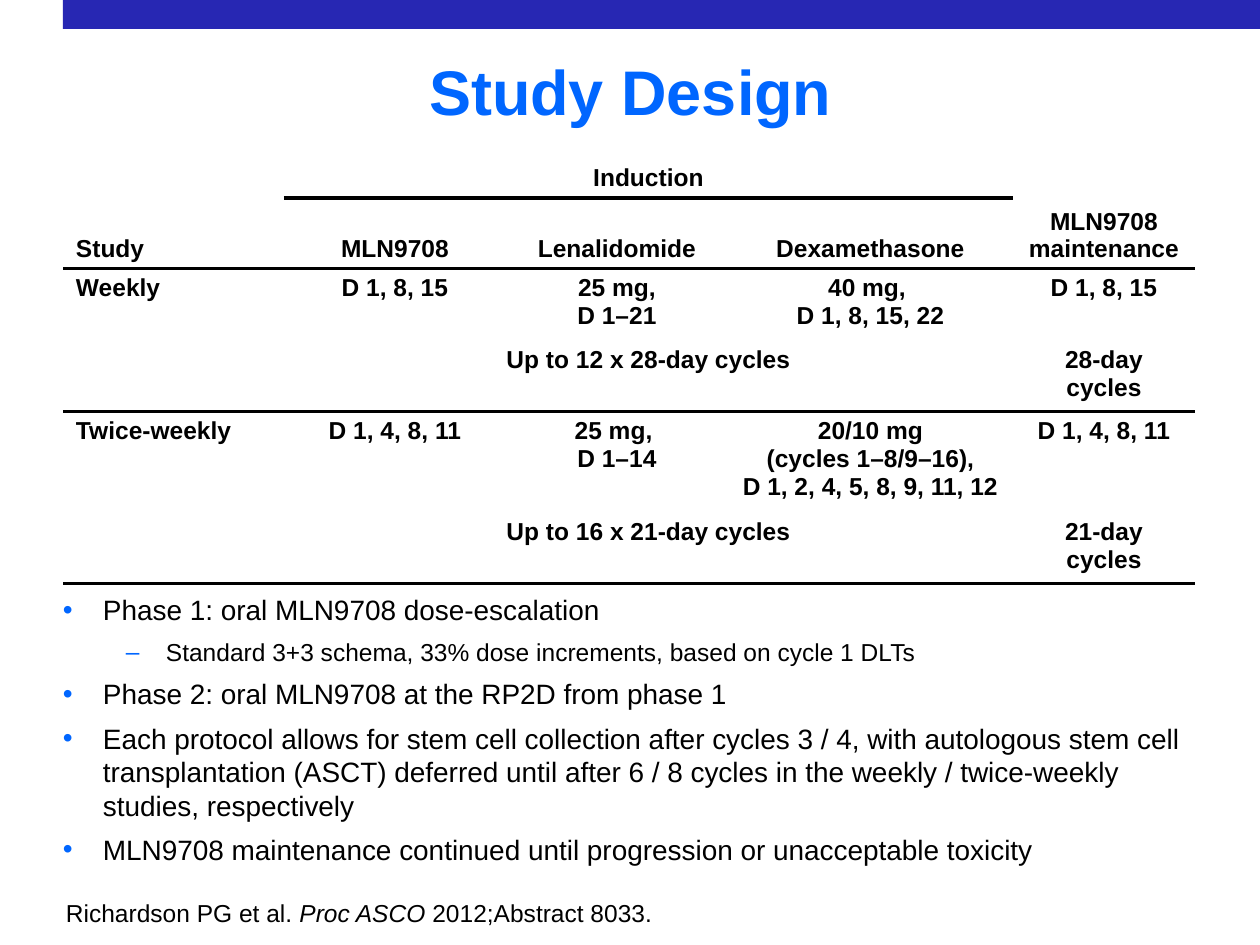
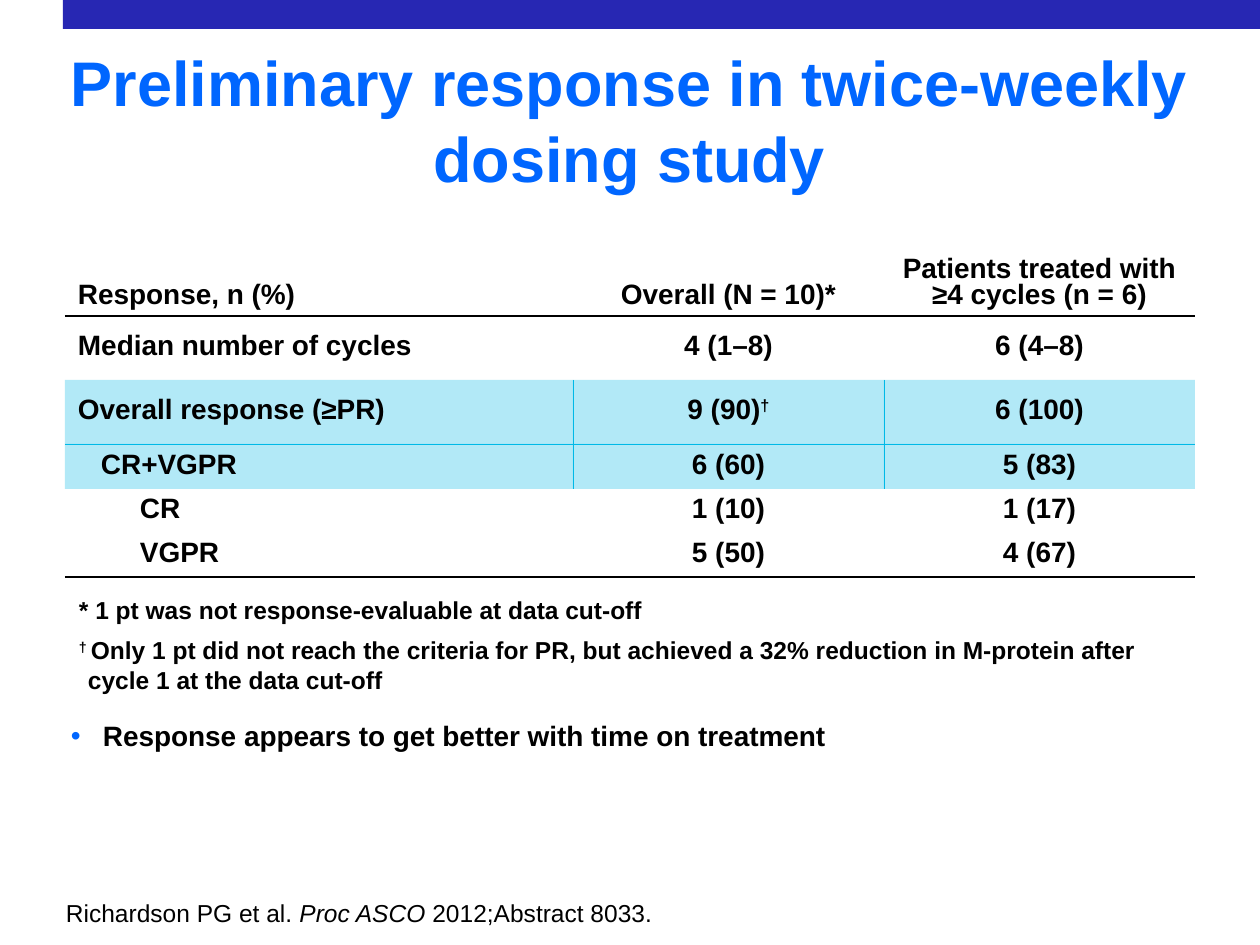
from dataclasses import dataclass

import pptx
import pptx.dml.color
import pptx.enum.shapes
import pptx.enum.text
import pptx.oxml.ns
import pptx.util
from lxml import etree

PX = 914400 / 126
FONT = "Arial"
BLACK, BLUE, NAVY, CYAN = "000000", "0066FF", "2727B3", "00B9E7"
LEFT, CENTER = pptx.enum.text.PP_ALIGN.LEFT, pptx.enum.text.PP_ALIGN.CENTER
TOP, MIDDLE, BOTTOM = (pptx.enum.text.MSO_ANCHOR.TOP, pptx.enum.text.MSO_ANCHOR.MIDDLE,
                       pptx.enum.text.MSO_ANCHOR.BOTTOM)
WIDE_INSETS, SLIM_INSETS, BULLET_INSETS = (13, 6, 13, 6), (5, 5, 5, 5), (0, 5, 5, 5)
NO_GRID_STYLE = "{2D5ABB26-0587-4C30-8999-92F81FD0307C}"


def px(length):
    return pptx.util.Emu(round(length * PX))


def rgb(color):
    return pptx.dml.color.RGBColor.from_string(color)


def add_xml(parent, tag, **attributes):
    return etree.SubElement(parent, pptx.oxml.ns.qn(tag), attributes)


@dataclass
class Text:
    """One paragraph; content is a string or a list of (text, "italic" | "super" | "")."""
    content: object
    size: int = 14
    bold: bool = False
    color: str = BLACK
    align: object = LEFT
    bullet: str = ""
    level: int = 0
    indent: int = 0
    hanging: int = 0
    before: int = 0
    after: int = 0
    spacing: float = 1.0


class Deck:
    def __init__(self):
        self.presentation = pptx.Presentation()
        self.presentation.slide_width = px(1260)
        self.presentation.slide_height = px(945)
        self.slide = None

    def add_slide(self):
        self.slide = self.presentation.slides.add_slide(self.presentation.slide_layouts[6])
        self.band(63, 0, 1197, 29)
        self.text_box(53, 892, 703, 43, [Text([
            ("Richardson PG et al. ", ""), ("Proc ASCO ", "italic"), ("2012;Abstract 8033.", "")])])

    def band(self, left, top, width, height):
        shape = self.slide.shapes.add_shape(
            pptx.enum.shapes.MSO_SHAPE.RECTANGLE, px(left), px(top), px(width), px(height))
        shape.shadow.inherit = False
        shape.fill.solid()
        shape.fill.fore_color.rgb = rgb(NAVY)
        shape.line.fill.background()

    def title(self, left, top, width, height, content, anchor=TOP, insets=WIDE_INSETS, spacing=1.0):
        self.text_box(left, top, width, height,
                      [Text(content, 36, True, BLUE, CENTER, spacing=spacing)], anchor, insets)

    def text_box(self, left, top, width, height, texts, anchor=TOP, insets=WIDE_INSETS):
        frame = self.slide.shapes.add_textbox(px(left), px(top), px(width), px(height)).text_frame
        frame.word_wrap = True
        frame.vertical_anchor = anchor
        (frame.margin_left, frame.margin_top,
         frame.margin_right, frame.margin_bottom) = map(px, insets)
        for index, text in enumerate(texts):
            self.set_paragraph(frame.add_paragraph() if index else frame.paragraphs[0], text)

    def set_paragraph(self, paragraph, text):
        if isinstance(text.content, str):
            paragraph.text = text.content
        else:
            for words, effect in text.content:
                run = paragraph.add_run()
                run.text = words
                if effect == "italic":
                    run.font.italic = True
                elif effect == "super":
                    run._r.get_or_add_rPr().set("baseline", "30000")
        paragraph.alignment = text.align
        paragraph.level = text.level
        paragraph.line_spacing = text.spacing
        paragraph.space_before = pptx.util.Pt(text.before)
        paragraph.space_after = pptx.util.Pt(text.after)
        properties = paragraph._p.get_or_add_pPr()
        properties.set("marL", str(px(text.indent)))
        properties.set("indent", str(px(-text.hanging)))
        if text.bullet:
            add_xml(add_xml(properties, "a:buClr"), "a:srgbClr", val=BLUE)
            add_xml(properties, "a:buFont", typeface=FONT)
            add_xml(properties, "a:buChar", char=text.bullet)
        font = paragraph.font
        font.name = FONT
        font.size = pptx.util.Pt(text.size)
        font.bold = text.bold
        font.color.rgb = rgb(text.color)

    def table(self, left, top, widths, heights):
        frame = self.slide.shapes.add_table(
            len(heights), len(widths), px(left), px(top), px(sum(widths)), px(sum(heights)))
        table = frame.table
        table.first_row = table.horz_banding = False
        table._tbl.tblPr.find(pptx.oxml.ns.qn("a:tableStyleId")).text = NO_GRID_STYLE
        for column, width in zip(table.columns, widths):
            column.width = px(width)
        for row, height in zip(table.rows, heights):
            row.height = px(height)
        return table

    def cell(self, cell, text, anchor, borders, tint=None):
        """Fill one cell; borders maps R or B to (color, points), tint is laid on at 30%."""
        if text.content:
            self.set_paragraph(cell.text_frame.paragraphs[0], text)
        cell.vertical_anchor = anchor
        (cell.margin_left, cell.margin_top,
         cell.margin_right, cell.margin_bottom) = map(px, WIDE_INSETS)
        properties = cell._tc.get_or_add_tcPr()
        for side in "RB":
            if side in borders:
                color, points = borders[side]
                line = add_xml(properties, f"a:ln{side}", w=str(pptx.util.Pt(points)))
                add_xml(add_xml(line, "a:solidFill"), "a:srgbClr", val=color)
        if tint:
            cell.fill.solid()
            cell.fill.fore_color.rgb = rgb(tint)
            fill_color = properties[-1][0]
            add_xml(fill_color, "a:alpha", val="30000")
        else:
            cell.fill.background()


def study_design(deck):
    deck.add_slide()
    deck.title(95, 55, 1071, 78, "Study Design", spacing=0.9)
    rows = [
        ["Study", "Induction", "", "", "MLN9708 maintenance"],
        ["", "MLN9708", "Lenalidomide", "Dexamethasone", ""],
        ["Weekly", "D 1, 8, 15", "25 mg,\vD 1–21", "40 mg, \vD 1, 8, 15, 22", "D 1, 8, 15"],
        ["", "Up to 12 x 28-day cycles", "", "", "28-day cycles"],
        ["Twice-weekly", "D 1, 4, 8, 11", "25 mg, \vD 1–14",
         "20/10 mg\v(cycles 1–8/9–16),\vD 1, 2, 4, 5, 8, 9, 11, 12", "D 1, 4, 8, 11"],
        ["", "Up to 16 x 21-day cycles", "", "", "21-day cycles"],
    ]
    table = deck.table(63, 147, [221, 222, 222, 285, 182], [51, 67, 72, 71, 101, 71])
    for column in (0, 4):
        table.cell(0, column).merge(table.cell(1, column))
    for row in (0, 3, 5):
        table.cell(row, 1).merge(table.cell(row, 3))
    for r, row in enumerate(rows):
        borders = {"B": (BLACK, 2.25)} if r in (0, 1, 3, 5) else {}
        for c, content in enumerate(row):
            deck.cell(table.cell(r, c), Text(content, bold=True, align=CENTER if c else LEFT),
                      BOTTOM if r < 2 else TOP, borders)

    def point(content):
        return Text(content, 16, bullet="•", indent=40, hanging=40, after=6)

    deck.text_box(63, 588, 1133, 305, [
        point("Phase 1: oral MLN9708 dose-escalation"),
        Text("Standard 3+3 schema, 33% dose increments, based on cycle 1 DLTs",
             bullet="–", level=1, indent=103, hanging=40, after=6),
        point("Phase 2: oral MLN9708 at the RP2D from phase 1"),
        point("Each protocol allows for stem cell collection after cycles 3 / 4, with autologous "
              "stem cell transplantation (ASCT) deferred until after 6 / 8 cycles in the weekly / "
              "twice-weekly studies, respectively"),
        point("MLN9708 maintenance continued until progression or unacceptable toxicity"),
    ], insets=BULLET_INSETS)


def preliminary_response(deck):
    deck.add_slide()
    deck.title(63, 59, 1133, 141, "Preliminary response in twice-weekly dosing study",
               BOTTOM, SLIM_INSETS)
    rows = [
        ["Response, n (%)", "Overall (N = 10)*", "Patients treated with ≥4 cycles (n = 6)"],
        ["Median number of cycles", "4 (1–8)", "6 (4–8)"],
        ["Overall response (≥PR)", [("9 (90)", ""), ("†", "super")], "6 (100)"],
        ["CR+VGPR", "6 (60)", "5 (83)"],
        ["CR", "1 (10)", "1 (17)"],
        ["VGPR", "5 (50)", "4 (67)"],
    ]
    label_indents = [0, 0, 0, 23, 62, 62]
    rules = {0: (BLACK, 1.5), 2: (CYAN, 0.25), 5: (BLACK, 1)}
    table = deck.table(65, 246, [508, 311, 311], [70, 64, 64, 45, 44, 44])
    for r, row in enumerate(rows):
        highlighted = r in (2, 3)
        for c, content in enumerate(row):
            borders = {"B": rules[r]} if r in rules else {}
            if highlighted and c < 2:
                borders["R"] = (CYAN, 0.25)
            text = Text(content, 16, True, align=CENTER if c else LEFT,
                        indent=0 if c else label_indents[r], spacing=0.85)
            deck.cell(table.cell(r, c), text, MIDDLE if r else BOTTOM, borders,
                      CYAN if highlighted else None)

    deck.text_box(66, 588, 1131, 112, [
        Text("* 1 pt was not response-evaluable at data cut-off", bold=True),
        Text([("† ", "super"),
              ("Only 1 pt did not reach the criteria for PR, but achieved a 32% reduction in "
               "M-protein after cycle 1 at the data cut-off", "")],
             bold=True, indent=9, hanging=9, before=6),
    ], BOTTOM)
    deck.text_box(71, 714, 1131, 63, [
        Text("Response appears to get better with time on treatment", 16, True,
             bullet="•", indent=32, hanging=32, after=6)], insets=BULLET_INSETS)


def main():
    deck = Deck()
    study_design(deck)
    preliminary_response(deck)
    deck.presentation.save("out.pptx")


if __name__ == "__main__":
    main()
